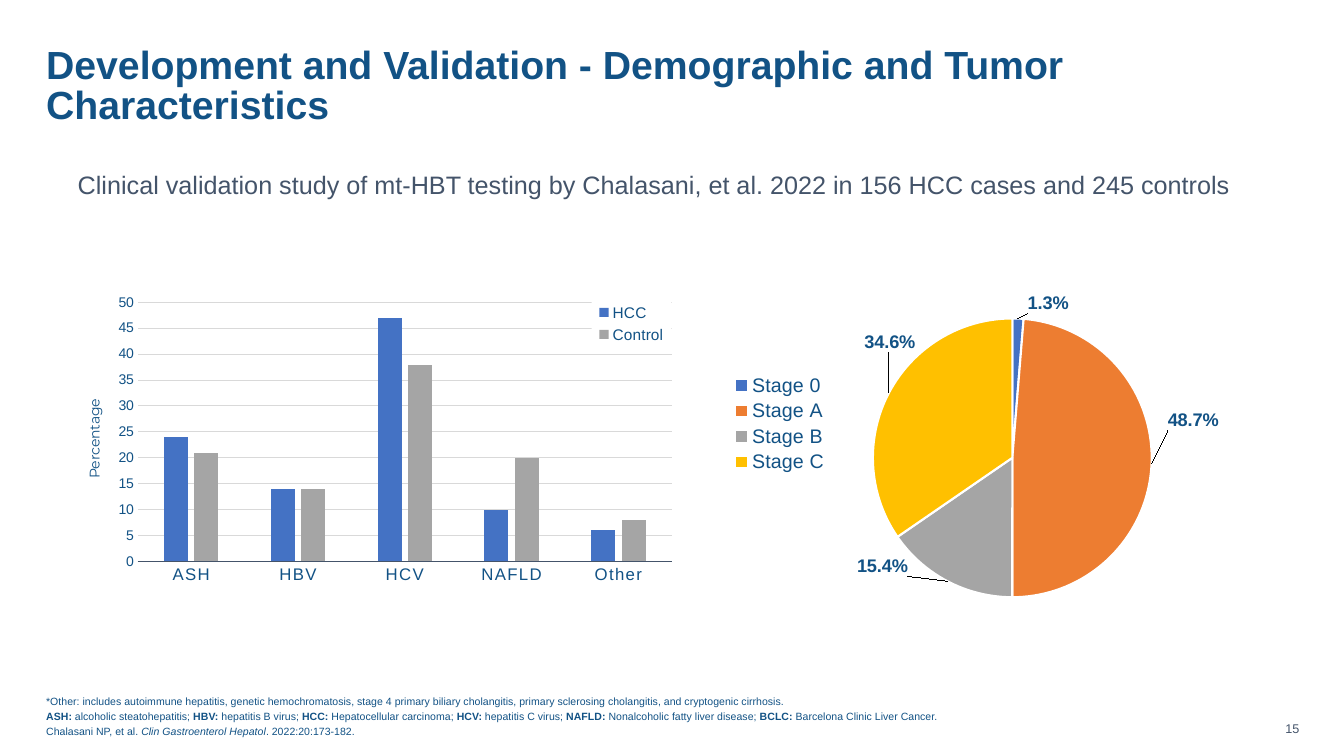
import pptx
import pptx.chart.data
import pptx.dml.color
import pptx.enum.chart
import pptx.enum.text
import pptx.oxml
import pptx.oxml.ns
import pptx.util

Pt = pptx.util.Pt
NAVY, SLATE, BLUE, GREY = "125285", "44546A", "4472C4", "A5A5A5"
FOOTNOTES = [
    [("*Other: includes autoimmune hepatitis, genetic hemochromatosis, stage 4 primary biliary "
      "cholangitis, primary sclerosing cholangitis, and cryptogenic cirrhosis.", "")],
    [("ASH:", "b"), (" alcoholic steatohepatitis; ", ""), ("HBV:", "b"), (" hepatitis B virus; ", ""),
     ("HCC:", "b"), (" Hepatocellular carcinoma; ", ""), ("HCV:", "b"), (" hepatitis C virus; ", ""),
     ("NAFLD: ", "b"), ("Nonalcoholic fatty liver disease; ", ""),
     ("BCLC:", "b"), (" Barcelona Clinic Liver Cancer.", "")],
    [("Chalasani NP, et al. ", ""), ("Clin Gastroenterol Hepatol", "i"), (". 2022:20:173-182.", "")],
]
ETIOLOGIES = ["ASH", "HBV", "HCV", "NAFLD", "Other"]
ETIOLOGY_SERIES = [("HCC", [24, 14, 47, 10, 6], BLUE), ("Control", [21, 14, 38, 20, 8], GREY)]
STAGES = [
    ("Stage 0", 0.013, BLUE, (0.053, -0.274)),
    ("Stage A", 0.487, "ED7D31", (0.179, -0.129)),
    ("Stage B", 0.154, GREY, (-0.157, 0.151)),
    ("Stage C", 0.346, "FFC000", (-0.098, -0.267)),
]


def color(code):
    """Return the colour for a hex string."""
    return pptx.dml.color.RGBColor.from_string(code)


def style_font(font, size, code=NAVY, bold=False, italic=False, name="Arial"):
    """Apply size, colour, weight and typeface to a font."""
    font.size, font.name, font.bold, font.italic = Pt(size), name, bold, italic
    font.color.rgb = color(code)


def add_text(slide, box, paragraphs, size, code=NAVY, bold=False, spacing=0.85, before=0,
             align="LEFT", anchor="TOP", insets=(0, 3.6, 7.2, 3.6)):
    """Place paragraphs of (text, style) runs in a box."""
    frame = slide.shapes.add_textbox(*map(Pt, box)).text_frame
    frame.word_wrap = True
    frame.vertical_anchor = pptx.enum.text.MSO_ANCHOR[anchor]
    frame.margin_left, frame.margin_top, frame.margin_right, frame.margin_bottom = map(Pt, insets)
    for index, runs in enumerate(paragraphs):
        paragraph = frame.add_paragraph() if index else frame.paragraphs[0]
        paragraph.alignment = pptx.enum.text.PP_ALIGN[align]
        paragraph.line_spacing, paragraph.space_before = spacing, Pt(before)
        for text, style in runs:
            run = paragraph.add_run()
            run.text = text
            style_font(run.font, size, code, bold or style == "b", style == "i")


def chart_xml(body):
    """Parse one chart element with its namespaces."""
    names = pptx.oxml.ns.nsdecls("c", "a")
    return pptx.oxml.parse_xml(body.replace(">", f" {names}>", 1))


def layout_xml(x, y, size=None, edge=False, inner=False):
    """Build a manual layout from fractions of the chart."""
    parts = '<c:layoutTarget val="inner"/>' if inner else ""
    parts += '<c:xMode val="edge"/><c:yMode val="edge"/>' if edge else ""
    parts += f'<c:x val="{x}"/><c:y val="{y}"/>'
    parts += f'<c:w val="{size[0]}"/><c:h val="{size[1]}"/>' if size else ""
    return chart_xml(f"<c:layout><c:manualLayout>{parts}</c:manualLayout></c:layout>")


def set_plot_area(chart, x, y, width, height):
    """Fix the inner plot area of a chart."""
    area = chart._chartSpace.chart.plotArea
    for old in area.findall(pptx.oxml.ns.qn("c:layout")):
        area.remove(old)
    area.insert(0, layout_xml(x, y, (width, height), True, True))


def set_legend(chart, size, x, y, width, height):
    """Show a white legend at a fixed place."""
    chart.has_legend = True
    legend = chart.legend
    legend.position = pptx.enum.chart.XL_LEGEND_POSITION.RIGHT
    legend.include_in_layout = False
    style_font(legend.font, size)
    element = legend._element
    element.find(pptx.oxml.ns.qn("c:legendPos")).addnext(layout_xml(x, y, (width, height), True))
    element.find(pptx.oxml.ns.qn("c:overlay")).addnext(chart_xml(
        '<c:spPr><a:solidFill><a:srgbClr val="FFFFFF"/></a:solidFill></c:spPr>'))


def add_chart(slide, box, kind, categories, series, number_format="General"):
    """Add an untitled chart and return it."""
    data = pptx.chart.data.CategoryChartData(number_format=number_format)
    data.categories = categories
    for name, values in series:
        data.add_series(name, values)
    chart = slide.shapes.add_chart(
        pptx.enum.chart.XL_CHART_TYPE[kind], *map(Pt, box), data).chart
    chart.has_title = False
    style_font(chart.font, 10)
    return chart


def add_etiology_chart(slide, box):
    """Draw the clustered columns of liver disease causes."""
    chart = add_chart(slide, box, "COLUMN_CLUSTERED", ETIOLOGIES,
                      [(name, values) for name, values, _ in ETIOLOGY_SERIES])
    columns = chart.plots[0]
    columns.gap_width, columns.overlap, columns.vary_by_categories = 219, -27, False
    for series, (_, _, code) in zip(columns.series, ETIOLOGY_SERIES):
        series.format.fill.solid()
        series.format.fill.fore_color.rgb = color(code)
    causes, percentage = chart.category_axis, chart.value_axis
    for axis, size in ((causes, 12), (percentage, 10)):
        axis.major_tick_mark = axis.minor_tick_mark = pptx.enum.chart.XL_TICK_MARK.NONE
        style_font(axis.tick_labels.font, size)
    causes.tick_labels.font._element.set("spc", "100")
    causes.format.line.color.rgb = color(SLATE)
    causes.format.line.width = Pt(0.75)
    percentage.minimum_scale, percentage.maximum_scale, percentage.major_unit = 0, 50, 5
    percentage.format.line.fill.background()
    percentage.major_gridlines.format.line.color.rgb = color("D9D9D9")
    percentage.major_gridlines.format.line.width = Pt(0.75)
    caption = percentage.axis_title.text_frame.paragraphs[0].add_run()
    caption.text = "Percentage"
    style_font(caption.font, 10, name="Montserrat")
    set_plot_area(chart, 0.095, 0.03, 0.905, 0.86)
    set_legend(chart, 11, 0.864, 0.02, 0.135, 0.16)


def add_stage_chart(slide, box):
    """Draw the pie of tumor stages with labels led outside."""
    chart = add_chart(slide, box, "PIE", [stage[0] for stage in STAGES],
                      [("Series 1", [stage[1] for stage in STAGES])], "0.0%")
    pie = chart.plots[0]
    pie.vary_by_categories = True
    shares = pie.series[0]
    center = pptx.enum.chart.XL_LABEL_POSITION.CENTER
    labels = shares.data_labels
    labels.show_value, labels.position = True, center
    labels.number_format, labels.number_format_is_linked = "0.0%", False
    style_font(labels.font, 13, bold=True)
    for index, (_, _, code, shift) in enumerate(STAGES):
        point = shares.points[index]
        point.format.fill.solid()
        point.format.fill.fore_color.rgb = color(code)
        point.format.line.color.rgb = color("FFFFFF")
        point.format.line.width = Pt(1.5)
        label = point.data_label
        label.position = center
        style_font(label.font, 13, bold=True)
        idx = labels._element.findall(pptx.oxml.ns.qn("c:dLbl"))[index][0]
        idx.addnext(layout_xml(*shift))
    set_plot_area(chart, 0.007, 0.081, 0.984, 0.898)
    set_legend(chart, 14, 0.04, 0.25, 0.17, 0.34)


def build_slide(slide):
    """Place the headings, charts and footnotes."""
    add_text(slide, (33, 30.25, 889, 64),
             [[("Development and Validation - Demographic and Tumor Characteristics", "")]],
             28, bold=True)
    add_text(slide, (55.5, 121, 904, 31),
             [[("Clinical validation study of mt-HBT testing by Chalasani, et al. 2022 "
                "in 156 HCC cases and 245 controls", "")]], 18, SLATE)
    add_etiology_chart(slide, (58.3, 209.5, 422, 215.3))
    add_stage_chart(slide, (501.8, 209.5, 443.5, 221.8))
    add_text(slide, (33, 493.2, 795, 33.8), FOOTNOTES, 7.5, before=3, anchor="BOTTOM",
             insets=(0, 0, 7.2, 0))
    add_text(slide, (893.5, 516.2, 34.6, 9.4), [[("15", "")]], 9, SLATE, spacing=0.9,
             align="RIGHT", anchor="BOTTOM", insets=(0, 0, 0, 0))


def main():
    """Build and save the presentation."""
    deck = pptx.Presentation()
    deck.slide_width, deck.slide_height = Pt(960), Pt(540)
    build_slide(deck.slides.add_slide(deck.slide_layouts[6]))
    deck.save("out.pptx")


if __name__ == "__main__":
    main()
